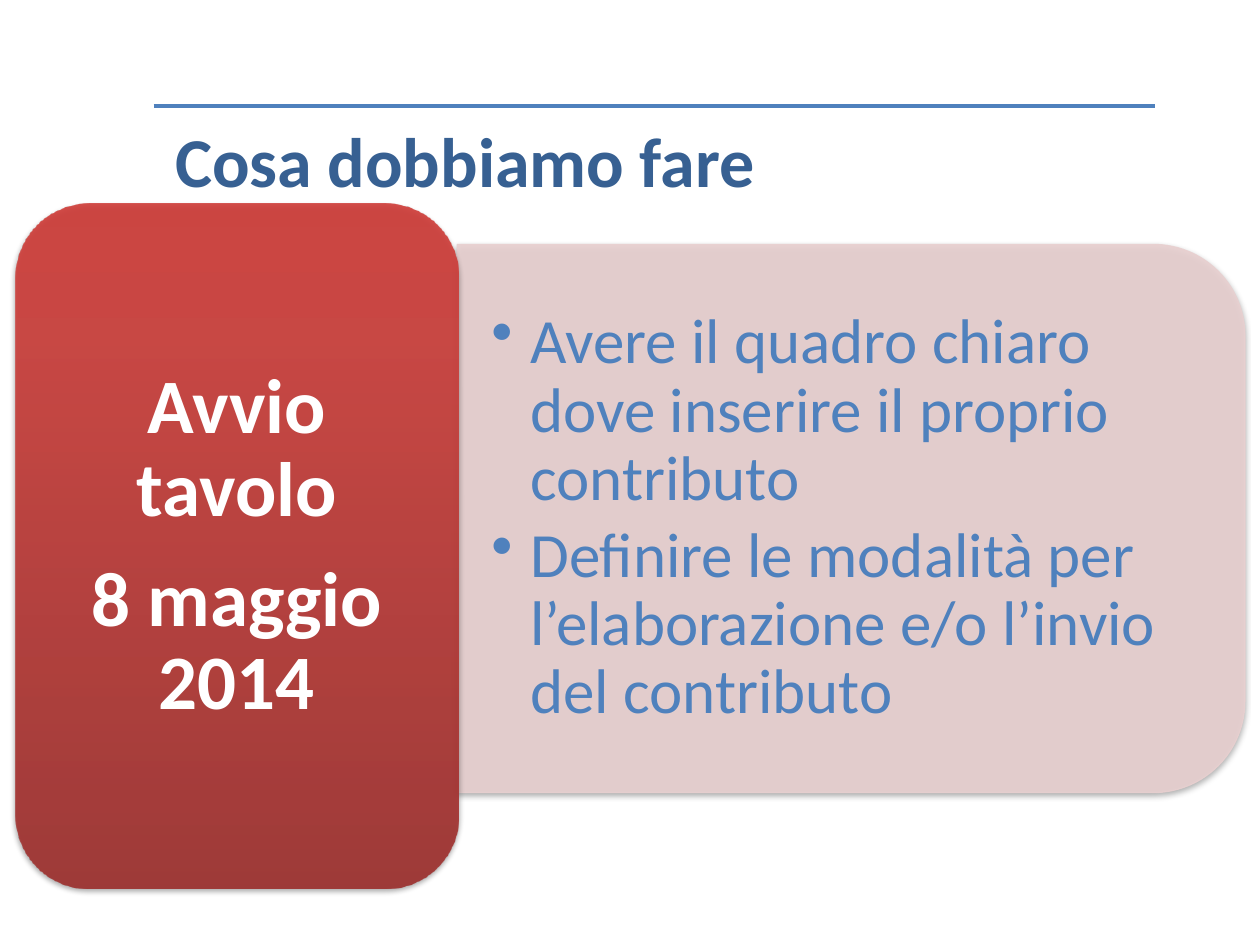
from lxml import etree
from pptx import Presentation
from pptx import util as u
from pptx.dml.color import RGBColor
from pptx.enum import shapes, text
from pptx.oxml import ns

COLORS = {
    "rule": "4F81BD", "title": "376092", "body": "4F81BD", "panel": "E8D0D0",
    "label": "FFFFFF", "low": "9C2F2D", "mid": "CB3E3A", "high": "CE3B37",
    "shadow": "000000",
}
FONT = "Calibri"
ALPHA = 90


def rgb(name):
    return RGBColor.from_string(COLORS[name])


def sub(parent, tag, **attrs):
    node = etree.SubElement(parent, ns.qn(tag))
    for key, val in attrs.items():
        node.set(key, str(val))
    return node


def fade(node, alpha):
    sub(node, "a:alpha", val=alpha * 1000)


def shade(shape):
    """Give the shape a soft shadow just below it."""
    shape.shadow.inherit = False
    effects = shape._element.spPr.find(ns.qn("a:effectLst"))
    drop = sub(effects, "a:outerShdw", blurRad=u.Pt(3.1), dist=u.Pt(1.8),
               dir=90 * 60000, rotWithShape=0)
    fade(sub(drop, "a:srgbClr", val=COLORS["shadow"]), 35)


def blend(shape, stops):
    """Fill the shape with a gradient that runs from bottom to top."""
    shape.fill.gradient()
    shape.fill.gradient_angle = 90
    items = shape._element.spPr.find(".//" + ns.qn("a:gsLst"))
    for item in list(items):
        items.remove(item)
    for pos, name in stops:
        stop = sub(items, "a:gs", pos=pos * 1000)
        fade(sub(stop, "a:srgbClr", val=COLORS[name]), ALPHA)


def write(slide, box, lines, size, color, inset, after, bold=False,
          align=text.PP_ALIGN.LEFT, anchor=text.MSO_ANCHOR.MIDDLE, indent=0):
    """Add a text box; an indent above zero makes its lines bulleted."""
    frame = slide.shapes.add_textbox(*map(u.Inches, box)).text_frame
    frame.word_wrap = True
    frame.vertical_anchor = anchor
    frame.margin_left = frame.margin_right = u.Inches(inset[0])
    frame.margin_top = frame.margin_bottom = u.Inches(inset[1])
    for i, line in enumerate(lines):
        para = frame.add_paragraph() if i else frame.paragraphs[0]
        para.text = line
        para.alignment = align
        para.line_spacing = 0.9
        para.space_after = u.Pt(round(size * after, 1))
        if indent:
            props = para._p.get_or_add_pPr()
            props.set("marL", str(u.Inches(indent)))
            props.set("indent", str(-u.Inches(indent)))
            sub(props, "a:buChar", char="•")
        for run in para.runs:
            run.font.name = FONT
            run.font.size = u.Pt(size)
            run.font.bold = bold
            run.font.color.rgb = rgb(color)


def header(slide, x, y, w, h):
    rule = slide.shapes.add_connector(
        shapes.MSO_CONNECTOR.STRAIGHT,
        u.Inches(x), u.Inches(y), u.Inches(x + w), u.Inches(y))
    rule.line.color.rgb = rgb("rule")
    rule.line.width = u.Pt(2)
    sub(rule._element.spPr, "a:effectLst")
    write(slide, (x, y, w, h), ["Cosa dobbiamo fare"], 40, "title",
          (0.17, 0.17), 0.35, bold=True, anchor=text.MSO_ANCHOR.TOP)


def panel(slide, x, y, w, h):
    # The shape stands upright and is turned a quarter about its centre.
    shift = (w - h) / 2
    back = slide.shapes.add_shape(
        shapes.MSO_SHAPE.ROUND_2_SAME_RECTANGLE,
        u.Inches(x + shift), u.Inches(y - shift), u.Inches(h), u.Inches(w))
    back.rotation = 90
    back.fill.solid()
    back.fill.fore_color.rgb = rgb("panel")
    back.line.color.rgb = rgb("panel")
    back.line.width = u.Pt(0.75)
    for node in back._element.spPr.iter(ns.qn("a:srgbClr")):
        fade(node, ALPHA)
    shade(back)
    pad = 0.21
    write(slide, (x, y + pad, w - pad, h - 2 * pad),
          ["Avere il quadro chiaro dove inserire il proprio contributo",
           "Definire le modalità per l’elaborazione e/o l’invio del contributo"],
          36, "body", (0.27, 0.14), 0.15, indent=0.31)


def label(slide, x, y, w, h):
    card = slide.shapes.add_shape(shapes.MSO_SHAPE.ROUNDED_RECTANGLE,
                                  *map(u.Inches, (x, y, w, h)))
    blend(card, [(0, "low"), (80, "mid"), (100, "high")])
    card.line.fill.background()
    shade(card)
    pad = 0.17
    write(slide, (x + pad, y + pad, w - 2 * pad, h - 2 * pad),
          ["Avvio tavolo", "8 maggio 2014"], 44, "label", (0.18, 0.09), 0.35,
          bold=True, align=text.PP_ALIGN.CENTER)


def main():
    deck = Presentation()
    deck.slide_width, deck.slide_height = u.Inches(10), u.Inches(7.5)
    slide = deck.slides.add_slide(deck.slide_layouts[6])
    header(slide, 1.22, 0.84, 7.95, 0.79)
    panel(slide, 3.63, 1.94, 6.25, 4.35)
    label(slide, 0.12, 1.62, 3.52, 5.43)
    deck.save("out.pptx")


if __name__ == "__main__":
    main()
